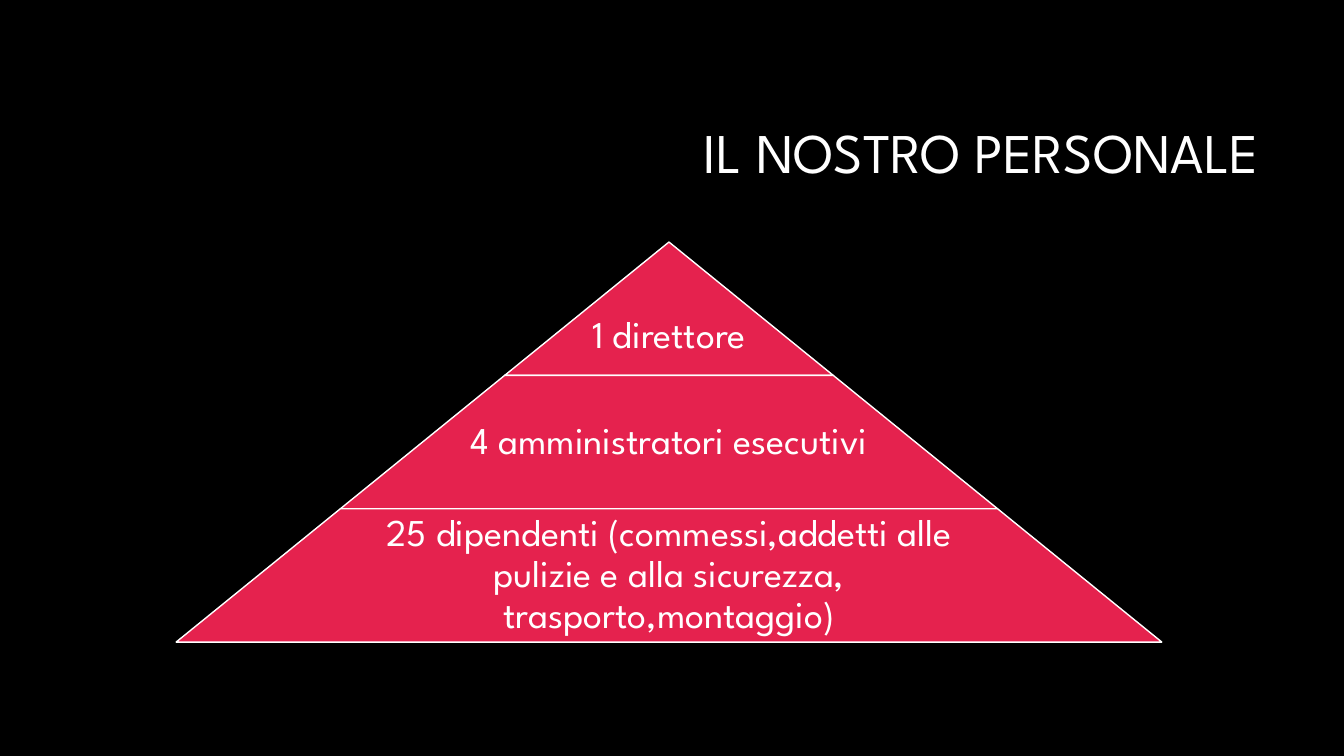
from dataclasses import dataclass

from pptx import Presentation
from pptx.dml.color import RGBColor
from pptx.enum.shapes import MSO_SHAPE
from pptx.enum.text import MSO_ANCHOR, PP_ALIGN
from pptx.util import Cm, Pt


@dataclass(frozen=True)
class Theme:
    font: str = "League Spartan"
    background: RGBColor = RGBColor(0x00, 0x00, 0x00)
    tier: RGBColor = RGBColor(0xE5, 0x22, 0x4E)
    text: RGBColor = RGBColor(0xFF, 0xFF, 0xFF)
    title_size: Pt = Pt(40)
    label_size: Pt = Pt(27)
    outline: Pt = Pt(1)


theme = Theme()


def add_text(s, text, left, top, width, height, size, align):
    """Add a vertically centred text box; lengths are in centimetres."""
    box = s.shapes.add_textbox(Cm(left), Cm(top), Cm(width), Cm(height))
    tf = box.text_frame
    tf.word_wrap = True
    tf.vertical_anchor = MSO_ANCHOR.MIDDLE
    p = tf.paragraphs[0]
    p.text = text
    p.alignment = align
    p.line_spacing = 0.9
    p.font.name = theme.font
    p.font.size = size
    p.font.color.rgb = theme.text
    return tf


prs = Presentation()
prs.slide_width, prs.slide_height = Cm(33.87), Cm(19.05)
s = prs.slides.add_slide(prs.slide_layouts[6])
s.background.fill.solid()
s.background.fill.fore_color.rgb = theme.background

add_text(s, "IL NOSTRO PERSONALE", 8.05, 2.13, 23.93, 3.58,
         theme.title_size, PP_ALIGN.RIGHT)

# Pyramid: every tier widens by one step on each side.
CENTER, TOP, STEP, TIER_HEIGHT = 16.86, 6.1, 4.14, 3.36
INSET = Cm(0.1)

# Label, label width as a share of the tier, gap above the label box
tiers = [
    ("1 direttore", 1, 1.4),
    ("4 amministratori esecutivi", 0.65, 0),
    ("25 dipendenti (commessi,addetti alle pulizie e alla sicurezza, "
     "trasporto,montaggio)", 0.65, 0),
]

for i, (label, share, gap) in enumerate(tiers):
    half = STEP * (i + 1)
    top = TOP + TIER_HEIGHT * i
    sp = s.shapes.add_shape(MSO_SHAPE.TRAPEZOID, Cm(CENTER - half), Cm(top),
                            Cm(2 * half), Cm(TIER_HEIGHT))
    sp.adjustments[0] = STEP / TIER_HEIGHT
    sp.shadow.inherit = False
    sp.fill.solid()
    sp.fill.fore_color.rgb = theme.tier
    sp.line.color.rgb = theme.text
    sp.line.width = theme.outline

    tf = add_text(s, label, CENTER - half * share, top + gap, 2 * half * share,
                  TIER_HEIGHT - gap, theme.label_size, PP_ALIGN.CENTER)
    tf.margin_left = tf.margin_right = tf.margin_top = tf.margin_bottom = INSET

prs.save("out.pptx")
